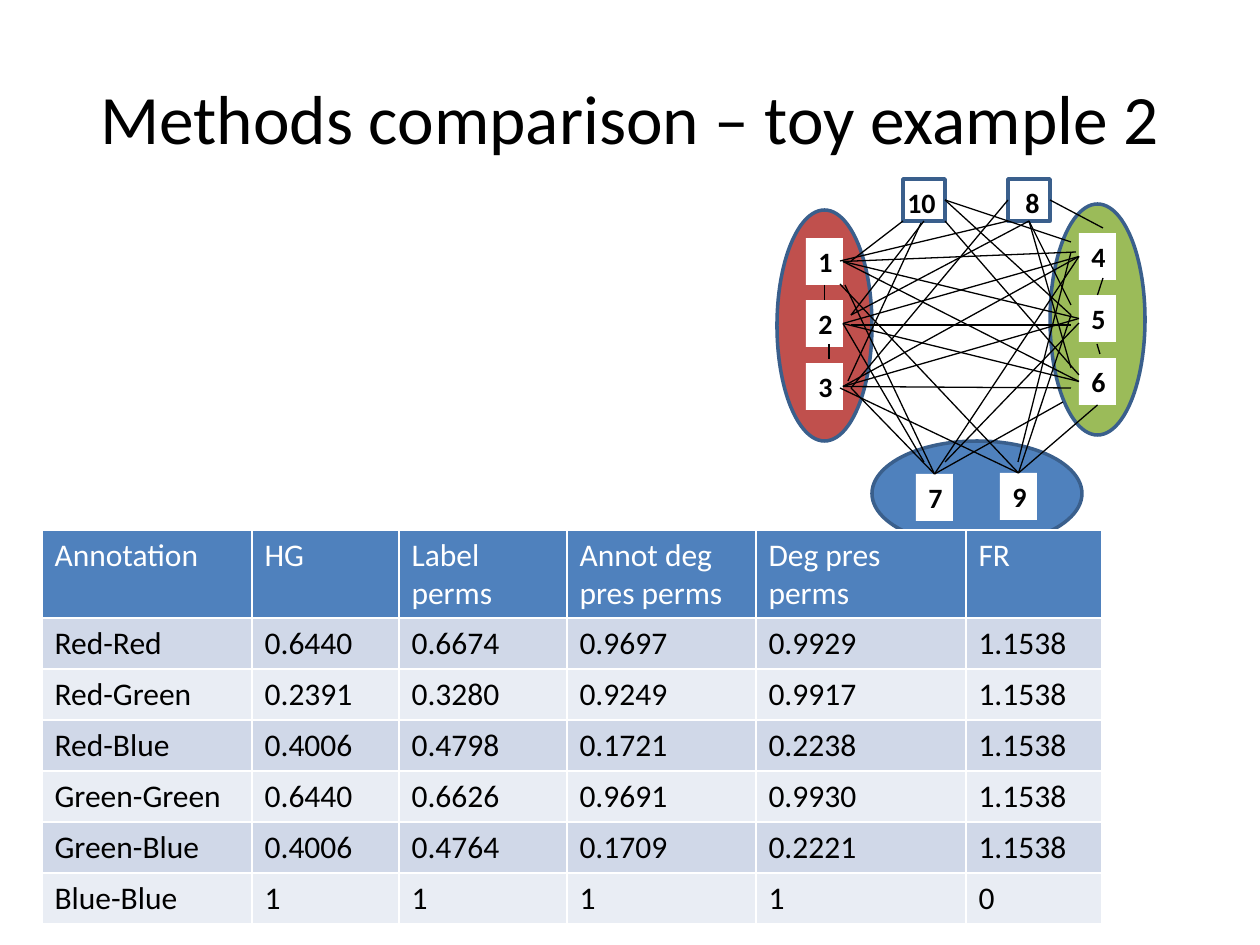
from dataclasses import dataclass

from lxml import etree
from pptx import Presentation
from pptx import util as u
from pptx.dml.color import RGBColor
from pptx.enum import shapes, text
from pptx.oxml import ns


@dataclass(frozen=True)
class Theme:
    font: str = "Calibri"
    title: float = 39.6
    body: int = 18
    label: int = 16
    outline: float = 2
    edge: float = 0.75
    black: str = "000000"
    white: str = "FFFFFF"
    border: str = "3A5F8C"
    red: str = "C0504D"
    green: str = "9BBB59"
    blue: str = "4F81BD"
    bands: tuple = ("D0D8E8", "E9EDF4")


THEME = Theme()
PX = u.Inches(1) / 126
TOP, LEFT, BOTTOM, RIGHT = range(4)
OVAL, RECT = shapes.MSO_SHAPE.OVAL, shapes.MSO_SHAPE.RECTANGLE

CLUSTERS = [
    (THEME.red, (0, 31, 95, 231)),
    (THEME.blue, (95, 262, 210, 105)),
    (THEME.green, (273, 25, 95, 231)),
]
NODES = {
    "1": (29, 59, 37, 47), "2": (29, 121, 37, 47), "3": (29, 184, 37, 47),
    "4": (302, 54, 37, 47), "5": (302, 116, 37, 47), "6": (302, 179, 37, 47),
    "8": (236, 0, 37, 47), "10": (118, 0, 63, 47),
    "7": (139, 295, 37, 47), "9": (223, 294, 37, 47),
}
FRAMES = {"frame 10": (126, 0, 42, 42), "frame 8": (231, 0, 42, 42)}

ONE, TWO, THREE = (("1", RIGHT), ("2", RIGHT), ("3", RIGHT))
FOUR, FIVE, SIX = (("4", LEFT), ("5", LEFT), ("6", LEFT))
SEVEN, NINE = ("7", TOP), ("9", TOP)
TEN_SIDE, TEN_BASE = ("frame 10", RIGHT), ("frame 10", BOTTOM)
EIGHT_SIDE, EIGHT_BASE = ("frame 8", LEFT), ("frame 8", BOTTOM)
EDGES = [
    (ONE, (299, 73)), ((74, 146), (294, 146)), (THREE, (294, 209)),
    (ONE, FIVE), (TWO, FOUR), (TWO, SIX), (THREE, FIVE),
    (TEN_SIDE, (294, 63)), (TWO, (147, 283)), (ONE, SIX),
    (("6", BOTTOM), NINE), (SEVEN, (286, 223)),
    ((320, 165), (323, 175)), (("5", TOP), (326, 99)),
    ((74, 82), (126, 42)), ((63, 82), (231, 42)),
    ((68, 106), SEVEN), ((63, 105), NINE),
    (("1", BOTTOM), ("2", TOP)), ((52, 165), (52, 180)),
    (("frame 8", RIGHT), (326, 49)), (THREE, FOUR),
    ((74, 136), EIGHT_BASE), ((74, 136), TEN_BASE),
    ((71, 202), (144, 44)), ((74, 209), EIGHT_SIDE),
    ((74, 209), SEVEN), ((63, 209), NINE),
    ((168, 42), (302, 196)), (EIGHT_BASE, (294, 189)),
    ((168, 283), (302, 144)), (NINE, (294, 136)),
    (TEN_SIDE, (294, 136)), (EIGHT_BASE, (294, 126)),
    (SEVEN, FOUR), ((241, 283), (294, 73)),
]

COLUMNS = [210, 147, 168, 189, 210, 136]
ROWS = [88] + [51] * 6
RESULTS = [
    ["Annotation", "HG", "Label perms", "Annot deg pres perms", "Deg pres perms", "FR"],
    ["Red-Red", "0.6440", "0.6674", "0.9697", "0.9929", "1.1538"],
    ["Red-Green", "0.2391", "0.3280", "0.9249", "0.9917", "1.1538"],
    ["Red-Blue", "0.4006", "0.4798", "0.1721", "0.2238", "1.1538"],
    ["Green-Green", "0.6440", "0.6626", "0.9691", "0.9930", "1.1538"],
    ["Green-Blue", "0.4006", "0.4764", "0.1709", "0.2221", "1.1538"],
    ["Blue-Blue", "1", "1", "1", "1", "0"],
]


def emu(*lengths):
    return [round(length * PX) for length in lengths]


def rgb(value):
    return RGBColor.from_string(value)


def write(frame, words, size, color, bold=False, align=text.PP_ALIGN.LEFT):
    para = frame.paragraphs[0]
    para.alignment = align
    span = para.add_run()
    span.text = words
    formats = {"name": THEME.font, "size": u.Pt(size), "bold": bold}
    for name, value in formats.items():
        setattr(span.font, name, value)
    span.font.color.rgb = rgb(color)


def add_part(group, kind, origin, box, fill=None, outline=None):
    left, top, width, height = box
    part = group.shapes.add_shape(
        kind, *emu(origin[0] + left, origin[1] + top, width, height))
    part.shadow.inherit = False
    if fill:
        part.fill.solid()
        part.fill.fore_color.rgb = rgb(fill)
    else:
        part.fill.background()
    if outline:
        part.line.color.rgb = rgb(outline)
        part.line.width = u.Pt(THEME.outline)
    else:
        part.line.fill.background()
    return part


def add_node(group, origin, label, box):
    node = add_part(group, RECT, origin, box, THEME.white)
    frame = node.text_frame
    formats = {"word_wrap": True, "vertical_anchor": text.MSO_ANCHOR.TOP,
               "auto_size": text.MSO_AUTO_SIZE.SHAPE_TO_FIT_TEXT}
    for name, value in formats.items():
        setattr(frame, name, value)
    write(frame, label, THEME.label, THEME.black, bold=True)
    return node


def end_point(end, origin, parts):
    if end[0] not in parts:
        return emu(origin[0] + end[0], origin[1] + end[1])
    part, side = parts[end[0]], end[1]
    across = {LEFT: 0, RIGHT: 2}.get(side, 1)
    down = {TOP: 0, BOTTOM: 2}.get(side, 1)
    return part.left + part.width * across // 2, part.top + part.height * down // 2


def add_edge(group, origin, ends, parts):
    start, finish = (end_point(end, origin, parts) for end in ends)
    edge = group.shapes.add_connector(shapes.MSO_CONNECTOR.STRAIGHT, *start, *finish)
    edge.line.color.rgb = rgb(THEME.black)
    edge.line.width = u.Pt(THEME.edge)
    etree.SubElement(edge._element.spPr, ns.qn("a:effectLst"))
    for end, join in zip(ends, (edge.begin_connect, edge.end_connect)):
        if end[0] in parts:
            join(parts[end[0]], end[1])


def add_network(page, origin):
    group = page.shapes.add_group_shape()
    for color, box in CLUSTERS:
        add_part(group, OVAL, origin, box, color, THEME.border)
    parts = {label: add_node(group, origin, label, box) for label, box in NODES.items()}
    for name, box in FRAMES.items():
        parts[name] = add_part(group, RECT, origin, box, outline=THEME.border)
    for ends in EDGES:
        add_edge(group, origin, ends, parts)


def add_results(page, origin):
    table = page.shapes.add_table(
        len(ROWS), len(COLUMNS), *emu(*origin, sum(COLUMNS), sum(ROWS))).table
    for column, width in zip(table.columns, COLUMNS):
        column.width = emu(width)[0]
    for index, (row, height, values) in enumerate(zip(table.rows, ROWS, RESULTS)):
        row.height = emu(height)[0]
        fill = THEME.bands[(index - 1) % 2] if index else THEME.blue
        color = THEME.black if index else THEME.white
        for position, (cell, value) in enumerate(zip(row.cells, values)):
            cell.fill.solid()
            cell.fill.fore_color.rgb = rgb(fill)
            if index and position:
                cell.vertical_anchor = text.MSO_ANCHOR.MIDDLE
            write(cell.text_frame, value, THEME.body, color)


def add_title(page, box):
    title = page.shapes.title
    title.left, title.top, title.width, title.height = emu(*box)
    title.text_frame.vertical_anchor = text.MSO_ANCHOR.MIDDLE
    write(title.text_frame, "Methods comparison – toy example 2",
          THEME.title, THEME.black, align=text.PP_ALIGN.CENTER)


def main():
    deck = Presentation()
    deck.slide_width, deck.slide_height = emu(1260, 945)
    page = deck.slides.add_slide(deck.slide_layouts[5])
    add_title(page, (63, 38, 1134, 158))
    add_network(page, (777, 179))
    add_results(page, (42, 530))
    deck.save("out.pptx")


if __name__ == "__main__":
    main()
